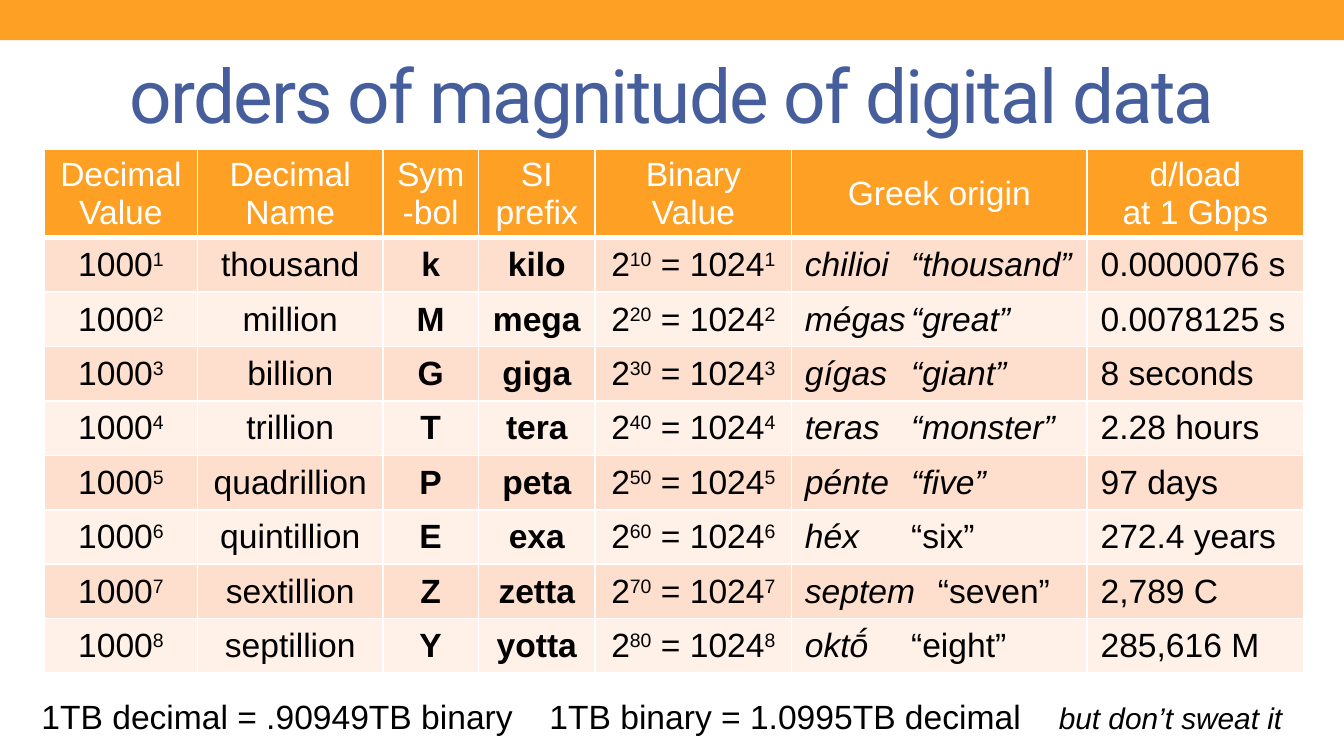
"""Builds the slide on orders of magnitude of digital data."""
from dataclasses import dataclass

from lxml.etree import SubElement
from pptx import Presentation
from pptx.dml.color import RGBColor
from pptx.enum.shapes import MSO_SHAPE as Shape
from pptx.enum.text import MSO_ANCHOR as Anchor, MSO_AUTO_SIZE as AutoSize, PP_ALIGN as Align
from pptx.oxml import parse_xml
from pptx.oxml.ns import nsdecls, qn
from pptx.slide import Slide
from pptx.util import Inches, Pt

ORANGE = RGBColor(0xFD, 0xA0, 0x23)
BLUE = RGBColor(0x46, 0x5E, 0x9C)
BLACK = RGBColor(0, 0, 0)
WHITE = RGBColor(0xFF, 0xFF, 0xFF)
BANDS = RGBColor(0xFE, 0xDF, 0xCD), RGBColor(0xFF, 0xF0, 0xE8)

HEADERS = ["Decimal\nValue", "Decimal\nName", "Sym\n-bol", "SI prefix",
           "Binary\nValue", "Greek origin", "d/load\nat 1 Gbps"]
WIDTHS = [1.14, 1.38, 0.71, 0.87, 1.46, 2.2, 1.61]
MAGNITUDES = [
    ("thousand", "k", "kilo", "chilioi", "“thousand”", "0.0000076 s"),
    ("million", "M", "mega", "mégas", "“great”", "0.0078125 s"),
    ("billion", "G", "giga", "gígas", "“giant”", "8 seconds"),
    ("trillion", "T", "tera", "teras", "“monster”", "2.28 hours"),
    ("quadrillion", "P", "peta", "pénte", "“five”", "97 days"),
    ("quintillion", "E", "exa", "héx", "“six”", "272.4 years"),
    ("sextillion", "Z", "zetta", "septem", "“seven”", "2,789 C"),
    ("septillion", "Y", "yotta", "oktṓ", "“eight”", "285,616 M"),
]
HEADER_HEIGHT, BODY_HEIGHT = 0.65, 3.24
ROW_HEIGHT = BODY_HEIGHT / len(MAGNITUDES)
LAST_ITALIC_MEANING = 5


def write(para, text, font="Arial", size=18, color=BLACK, bold=False,
          italic=False, raised=False, spacing=0):
    """Append formatted text to a paragraph, breaking lines at newlines."""
    for index, line in enumerate(text.split("\n")):
        if index:
            para.add_line_break()
        span = para.add_run()
        span.text = line
        span.font.name, span.font.size = font, Pt(size)
        span.font.bold, span.font.italic = bold, italic
        span.font.color.rgb = color
        properties = span._r.get_or_add_rPr()
        if raised:
            properties.set("baseline", "30000")
        if spacing:
            properties.set("spc", str(spacing * 100))


def set_tabs(para, *stops):
    """Give a paragraph left tab stops, in inches."""
    tabs = SubElement(para._p.get_or_add_pPr(), qn("a:tabLst"))
    for stop in stops:
        SubElement(tabs, qn("a:tab"), pos=str(Inches(stop)), algn="l")


def set_borders(cell, top=1, bottom=1):
    """Draw white borders around a cell, with widths in points."""
    sides = {"L": 1, "R": 1, "T": top, "B": bottom}
    for index, (side, width) in enumerate(sides.items()):
        line = parse_xml(
            f'<a:ln{side} {nsdecls("a")} w="{Pt(width)}"><a:solidFill>'
            f'<a:srgbClr val="{WHITE}"/></a:solidFill></a:ln{side}>')
        cell._tc.get_or_add_tcPr().insert(index, line)


@dataclass
class Page:
    """Holds the current slide and its accent colours."""
    slide: Slide
    accent: RGBColor = ORANGE
    heading: RGBColor = BLUE

    def bar(self, left, top, width, height):
        """Add a plain accent bar."""
        bar = self.slide.shapes.add_shape(
            Shape.RECTANGLE, Inches(left), Inches(top), Inches(width), Inches(height))
        bar.shadow.inherit = False
        bar.fill.solid()
        bar.fill.fore_color.rgb = self.accent
        bar.line.fill.background()

    def title(self, text, left, top, width, height):
        """Place and fill the title placeholder."""
        title = self.slide.shapes.title
        title.left, title.top = Inches(left), Inches(top)
        title.width, title.height = Inches(width), Inches(height)
        frame = title.text_frame
        frame.auto_size = AutoSize.NONE
        frame.vertical_anchor = Anchor.MIDDLE
        para = frame.paragraphs[0]
        para.alignment = Align.CENTER
        write(para, text, font="Roboto", size=40, color=self.heading, spacing=-1)

    def table(self, left, top, row_count):
        """Add an unbanded table with the slide's column widths."""
        height = HEADER_HEIGHT + ROW_HEIGHT * row_count
        table = self.slide.shapes.add_table(
            row_count + 1, len(WIDTHS), Inches(left), Inches(top),
            Inches(sum(WIDTHS)), Inches(height)).table
        table.horz_banding = False
        for column, width in zip(table.columns, WIDTHS):
            column.width = Inches(width)
        for index, row in enumerate(table.rows):
            row.height = Inches(ROW_HEIGHT if index else HEADER_HEIGHT)
        return table

    def cell(self, cell, fill, spans, align=Align.CENTER, tabs=(), **borders):
        """Fill one table cell with formatted spans."""
        cell.fill.solid()
        cell.fill.fore_color.rgb = fill
        set_borders(cell, **borders)
        cell.vertical_anchor = Anchor.MIDDLE
        cell.margin_left = cell.margin_right = Inches(0.05 if align == Align.CENTER else 0.1)
        para = cell.text_frame.paragraphs[0]
        para.alignment = align
        if tabs:
            set_tabs(para, *tabs)
        for text, style in spans:
            write(para, text, **style)

    def magnitudes(self, left, top):
        """Add the table of magnitudes."""
        table = self.table(left, top, len(MAGNITUDES))
        for column, header in enumerate(HEADERS):
            self.cell(table.cell(0, column), self.accent,
                      [(header, {"color": WHITE})], bottom=3)
        plain, strong, slanted, power = {}, {"bold": True}, {"italic": True}, {"raised": True}
        for row, (name, symbol, prefix, greek, meaning, time) in enumerate(MAGNITUDES, 1):
            meaning_style = slanted if row <= LAST_ITALIC_MEANING else plain
            contents = [
                [("1000", plain), (str(row), power)],
                [(name, plain)],
                [(symbol, strong)],
                [(prefix, strong)],
                [("2", plain), (str(row * 10), power), (" = 1024", plain), (str(row), power)],
                [(greek + "\t", slanted), (meaning, meaning_style)],
                [(time, plain)],
            ]
            for column, spans in enumerate(contents):
                self.cell(table.cell(row, column), BANDS[(row - 1) % 2], spans,
                          align=Align.LEFT if column >= 5 else Align.CENTER,
                          tabs=(0.79, 0.99) if column == 5 else (),
                          top=3 if row == 1 else 1)

    def note(self, left, top, width, height):
        """Add the line of conversions below the table."""
        box = self.slide.shapes.add_textbox(
            Inches(left), Inches(top), Inches(width), Inches(height))
        box.text_frame.word_wrap = True
        para = box.text_frame.paragraphs[0]
        set_tabs(para, 3.78, 7.57)
        write(para, "1TB decimal = .90949TB binary\t1TB binary = 1.0995TB decimal\t")
        write(para, "but don’t sweat it", size=16, italic=True)


def main():
    """Build and save the deck."""
    deck = Presentation()
    deck.slide_width = Inches(10)
    deck.slide_height = deck.slide_width * 9 // 16
    page = Page(deck.slides.add_slide(deck.slide_layouts[5]))
    page.bar(0, 0, 10, 0.3)
    page.title("orders of magnitude of digital data", 0.5, 0.29, 9, 0.81)
    page.magnitudes(0.33, 1.11)
    page.note(0.21, 5.13, 9.58, 0.4)
    deck.save("out.pptx")


if __name__ == "__main__":
    main()
